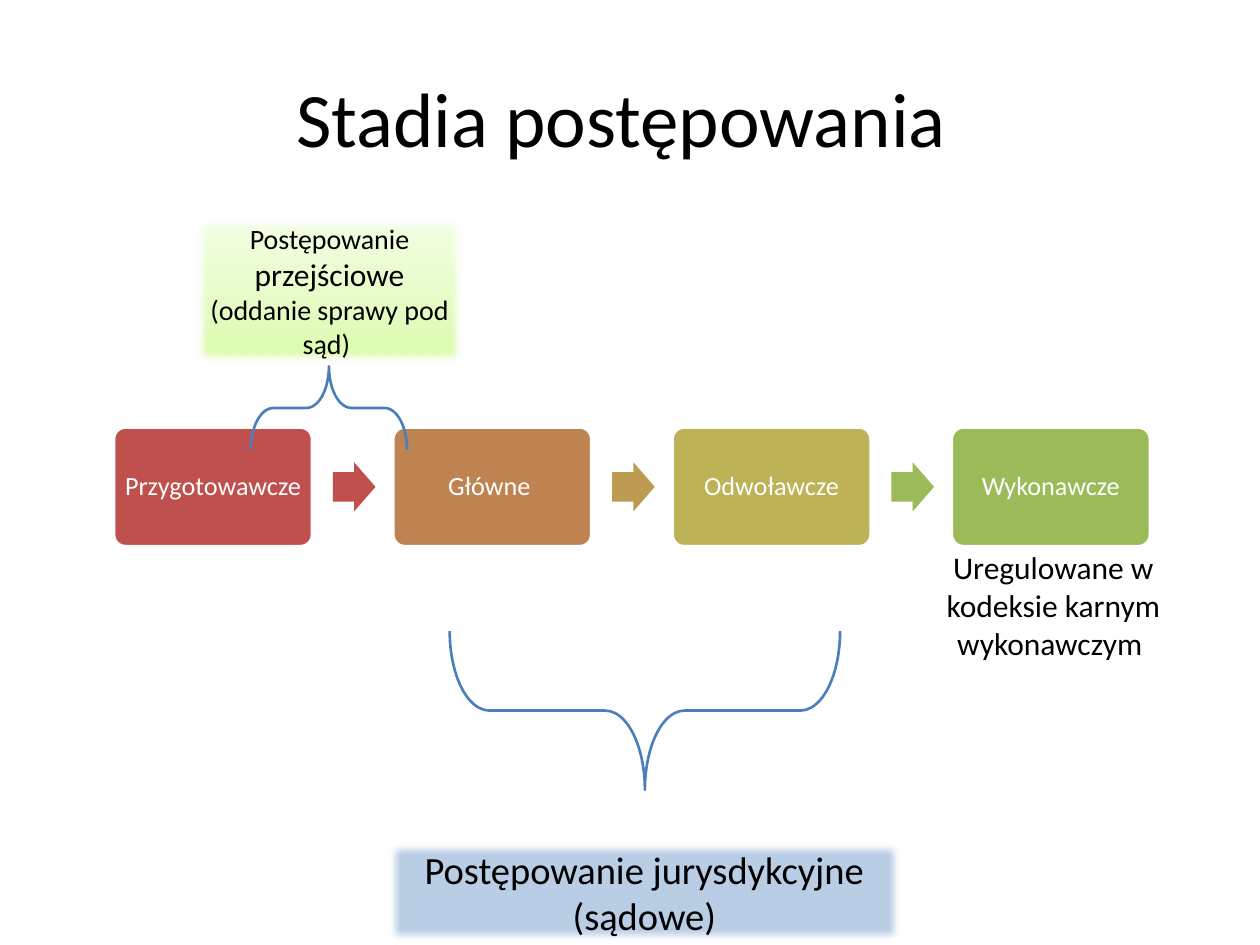
"""Build a slide showing the stages of criminal proceedings."""
from copy import deepcopy
from dataclasses import dataclass

from lxml import etree
from pptx import Presentation
from pptx.dml.color import RGBColor
from pptx.enum.shapes import MSO_SHAPE
from pptx.enum.text import MSO_ANCHOR, PP_ALIGN
from pptx.oxml.ns import qn
from pptx.util import Cm, Pt

RECT = MSO_SHAPE.RECTANGLE
ROUNDED = MSO_SHAPE.ROUNDED_RECTANGLE
ARROW = MSO_SHAPE.RIGHT_ARROW
LEFT_BRACE = MSO_SHAPE.LEFT_BRACE
RIGHT_BRACE = MSO_SHAPE.RIGHT_BRACE
CENTER = PP_ALIGN.CENTER
TOP, MIDDLE = MSO_ANCHOR.TOP, MSO_ANCHOR.MIDDLE


@dataclass(frozen=True)
class Theme:
    font: str = "Calibri"
    ink: str = "000000"
    white: str = "FFFFFF"
    brace: str = "4B7EBC"
    court: str = "B9CDE5"
    transition: tuple = ((0, "DAFDA7"), (0.35, "E4FCC2"), (1, "F5FFE7"))
    title: int = 44
    stage: int = 15
    small: int = 16
    body: int = 18
    large: int = 22


@dataclass(frozen=True)
class Box:
    x: float
    y: float
    w: float
    h: float

    def lengths(self) -> tuple:
        return Cm(self.x), Cm(self.y), Cm(self.w), Cm(self.h)


@dataclass(frozen=True)
class Stage:
    name: str
    color: str
    arrow: str = ""


@dataclass(frozen=True)
class Brace:
    kind: int
    box: Box
    adjustments: tuple


T = Theme()
STAGES = (
    Stage("Przygotowawcze", "C0504D", "C0504D"),
    Stage("Główne ", "BE8351", "BD9B53"),
    Stage("Odwoławcze", "BDB255", "9BBB59"),
    Stage("Wykonawcze", "9BBB59"),
)
STAGE_X, STAGE_STEP, ARROW_OFFSET = 2.29, 5.63, 4.42
BRACES = (
    Brace(RIGHT_BRACE, Box(11.4, 10.39, 3.2, 7.87), (0.25, 0.5)),
    Brace(LEFT_BRACE, Box(5.79, 6.65, 1.68, 3.15), (0.27, 0.5)),
)


def rgb(color: str) -> RGBColor:
    return RGBColor.from_string(color)


def write(shape, *paragraphs: tuple, color: str = T.ink, anchor=MIDDLE,
          spacing: float = 1.0, inset: tuple = (0.25, 0.13)) -> None:
    """Fill a shape with paragraphs made of (text, size) runs."""
    tf = shape.text_frame
    tf.word_wrap = True
    tf.vertical_anchor = anchor
    tf.margin_left = tf.margin_right = Cm(inset[0])
    tf.margin_top = tf.margin_bottom = Cm(inset[1])
    for i, runs in enumerate(paragraphs):
        p = tf.add_paragraph() if i else tf.paragraphs[0]
        p.alignment = CENTER
        p.line_spacing = spacing
        for text, size in runs:
            r = p.add_run()
            r.text = text
            r.font.name = T.font
            r.font.size = Pt(size)
            r.font.color.rgb = rgb(color)


def add_text(s, box: Box, text: str, size: int, anchor=TOP) -> None:
    write(s.shapes.add_textbox(*box.lengths()), ((text, size),), anchor=anchor)


def add_shape(s, kind: int, box: Box, fill: str = "", line: str = "",
              width: float = 1.0, adjustments: tuple = ()):
    sp = s.shapes.add_shape(kind, *box.lengths())
    sp.shadow.inherit = False
    for i, value in enumerate(adjustments):
        sp.adjustments[i] = value
    if fill:
        sp.fill.solid()
        sp.fill.fore_color.rgb = rgb(fill)
    else:
        sp.fill.background()
    if line:
        sp.line.color.rgb = rgb(line)
        sp.line.width = Pt(width)
    else:
        sp.line.fill.background()
    return sp


def soften(sp) -> None:
    effects = sp.element.spPr.find(qn("a:effectLst"))
    etree.SubElement(effects, qn("a:softEdge")).set("rad", str(Pt(5)))


def fill_gradient(sp, stops: tuple) -> None:
    sp.fill.gradient()
    sp.fill.gradient_angle = 90
    stop_list = sp.element.spPr.find(qn("a:gradFill")).find(qn("a:gsLst"))
    while len(stop_list) < len(stops):
        stop_list.append(deepcopy(stop_list[0]))
    for stop, (position, color) in zip(sp.fill.gradient_stops, stops):
        stop.position = position
        stop.color.rgb = rgb(color)


def add_stage(s, stage: Stage, x: float) -> None:
    sp = add_shape(s, ROUNDED, Box(x, 8.61, 4.01, 2.41), stage.color,
                   T.white, 2, (0.1,))
    write(sp, ((stage.name, T.stage),), color=T.white, spacing=0.9,
          inset=(0.05, 0.15))
    if stage.arrow:
        add_shape(s, ARROW, Box(x + ARROW_OFFSET, 9.32, 0.86, 0.99),
                  stage.arrow, adjustments=(0.6, 0.5))


def main() -> None:
    prs = Presentation()
    prs.slide_width, prs.slide_height = Cm(25.4), Cm(19.05)
    s = prs.slides.add_slide(prs.slide_layouts[6])

    add_text(s, Box(1.27, 0.76, 22.86, 3.18), "Stadia postępowania ",
             T.title, MIDDLE)
    for i, stage in enumerate(STAGES):
        add_stage(s, stage, STAGE_X + i * STAGE_STEP)
    for brace in BRACES:
        sp = add_shape(s, brace.kind, brace.box, line=T.brace, width=1.5,
                       adjustments=brace.adjustments)
        sp.rotation = 90

    transition = add_shape(s, RECT, Box(3.89, 4.32, 5.51, 3.07))
    fill_gradient(transition, T.transition)
    soften(transition)
    write(transition,
          (("Postępowanie ", T.small), ("przejściowe", T.body)),
          (("(oddanie sprawy pod sąd) ", T.small),))

    court = add_shape(s, RECT, Box(7.77, 16.92, 10.44, 2.13), T.court)
    soften(court)
    write(court, (("Postępowanie jurysdykcyjne (sądowe)", T.large),))

    add_text(s, Box(18.34, 10.92, 5.79, 2.57),
             "Uregulowane w kodeksie karnym wykonawczym ", T.body)
    prs.save("out.pptx")


if __name__ == "__main__":
    main()
